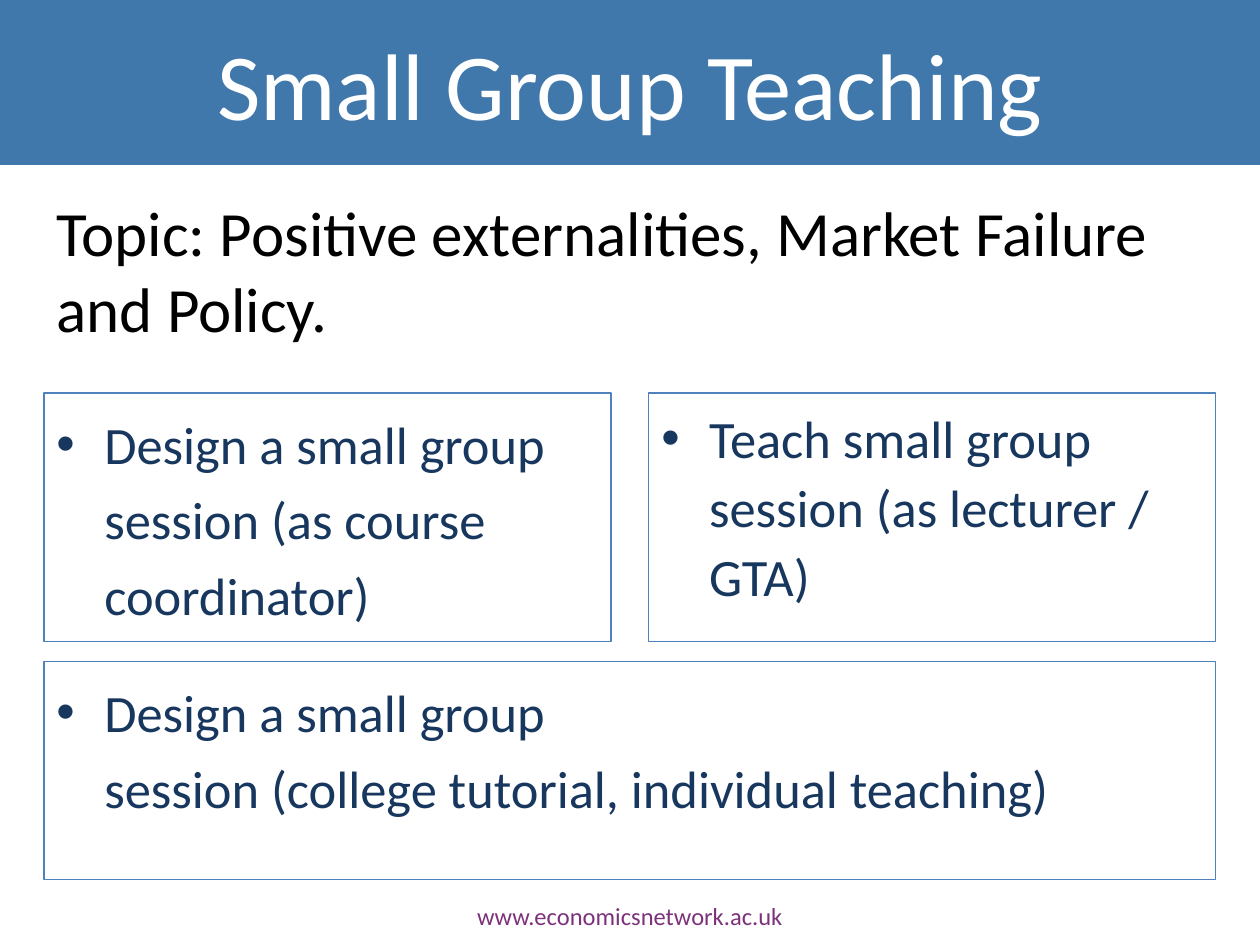
import pptx
import pptx.util
import pptx.dml.color
import pptx.enum.shapes
import pptx.enum.text
import pptx.oxml.ns
import lxml.etree

Inches = pptx.util.Inches
Pt = pptx.util.Pt
Align = pptx.enum.text.PP_ALIGN
Anchor = pptx.enum.text.MSO_ANCHOR

title = "Small Group Teaching"
topic = "Topic: Positive externalities, Market Failure\vand Policy."
site = "www.economicsnetwork.ac.uk"
tasks = [
    ("Design a small group\vsession (as course coordinator)", 0, 0, 1, 1.2),
    ("Teach small group\vsession (as lecturer / GTA)", 0, 1, 1, 1.1),
    ("Design a small group\vsession (college tutorial, individual teaching)", 1, 0, 2, 1.2),
]

theme = {
    "font": "Calibri",
    "band": "4078AB",
    "edge": "4F81BD",
    "title": (54, "FFFFFF"),
    "topic": (36, "000000"),
    "task": (30, "17375E"),
    "site": (14, "7C327B"),
}

left, wide, gap, indent = 0.35, 4.5, 0.3, 0.38
rows = [(3.12, 1.97), (5.25, 1.73)]


def color(code):
    return pptx.dml.color.RGBColor.from_string(code)


def write(shape, text, style, align=Align.LEFT, anchor=Anchor.TOP):
    frame = shape.text_frame
    frame.word_wrap = True
    frame.vertical_anchor = anchor
    frame.text = text
    para = frame.paragraphs[0]
    para.alignment = align
    size, code = theme[style]
    for run in para.runs:
        run.font.name = theme["font"]
        run.font.size = Pt(size)
        run.font.color.rgb = color(code)
    return para


def block(slide, area):
    kind = pptx.enum.shapes.MSO_SHAPE.RECTANGLE
    shape = slide.shapes.add_shape(kind, *map(Inches, area))
    shape.shadow.inherit = False
    return shape


def label(slide, area, text, style, align=Align.LEFT):
    box = slide.shapes.add_textbox(*map(Inches, area))
    write(box, text, style, align)
    return box


def bullet(para):
    props = para._p.get_or_add_pPr()
    props.set("marL", str(Inches(indent)))
    props.set("indent", str(-Inches(indent)))
    qn = pptx.oxml.ns.qn
    lxml.etree.SubElement(props, qn("a:buFont")).set("typeface", "Arial")
    lxml.etree.SubElement(props, qn("a:buChar")).set("char", "•")


def card(slide, text, row, col, span, pitch):
    top, high = rows[row]
    width = span * wide + (span - 1) * gap
    shape = block(slide, (left + col * (wide + gap), top, width, high))
    shape.fill.background()
    shape.line.color.rgb = color(theme["edge"])
    shape.line.width = Pt(0.75)
    para = write(shape, text, "task")
    bullet(para)
    para.line_spacing = pitch
    para.space_after = Pt(5)


def main():
    deck = pptx.Presentation()
    deck.slide_width, deck.slide_height = Inches(10), Inches(7.5)
    slide = deck.slides.add_slide(deck.slide_layouts[6])

    band = block(slide, (0, 0, 10, 1.31))
    band.fill.solid()
    band.fill.fore_color.rgb = color(theme["band"])
    band.line.fill.background()
    write(band, title, "title", Align.CENTER, Anchor.MIDDLE)

    head = label(slide, (left, 1.49, 9.06, 1.31), topic, "topic")
    head.text_frame.word_wrap = False
    for task in tasks:
        card(slide, *task)
    label(slide, (0, 7.1, 10, 0.34), site, "site", Align.CENTER)

    deck.save("out.pptx")


if __name__ == "__main__":
    main()
